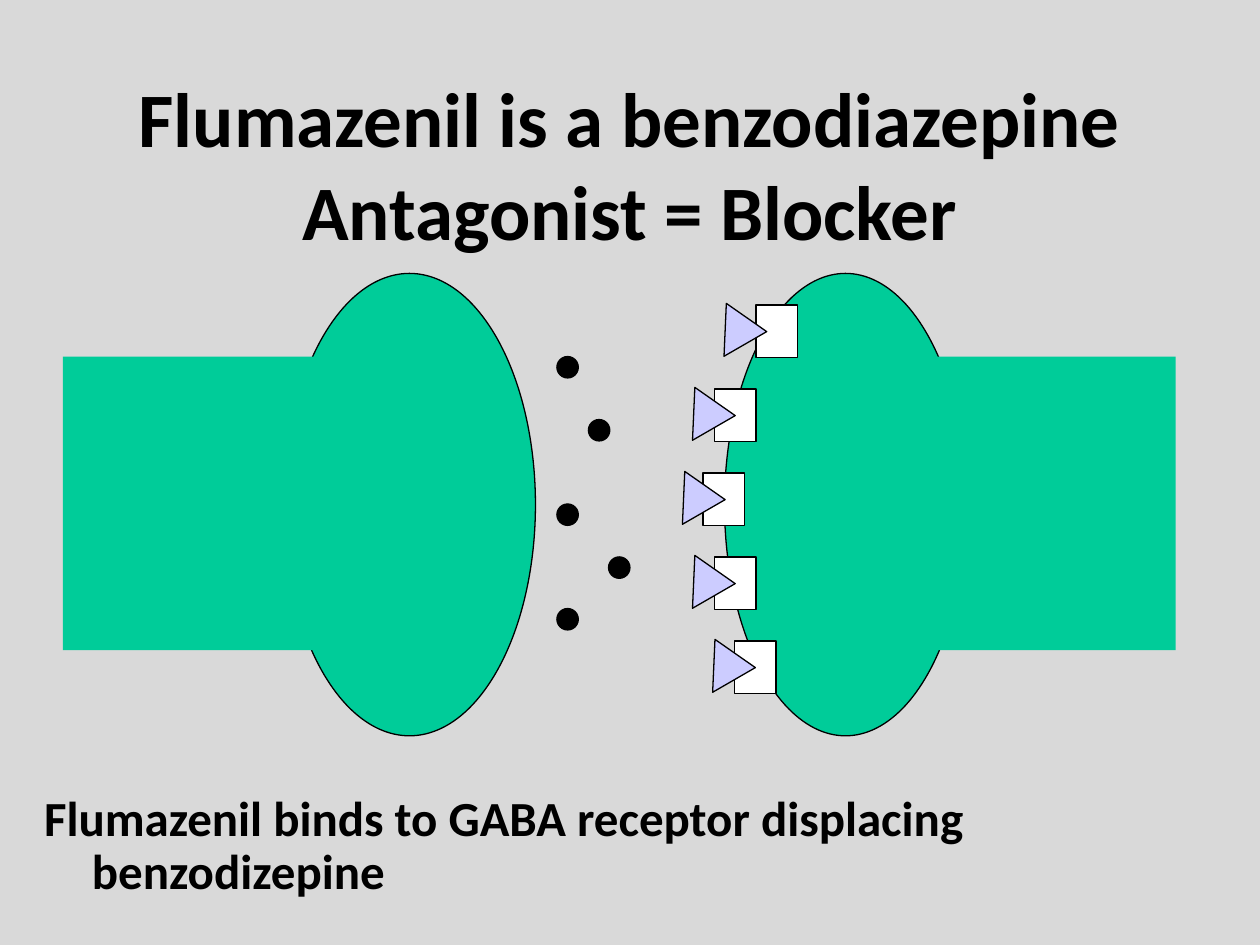
import pptx
import pptx.util
import pptx.dml.color
import pptx.enum.shapes
import pptx.enum.text
import pptx.oxml.ns
import lxml.etree

Inches = pptx.util.Inches
Pt = pptx.util.Pt
RGBColor = pptx.dml.color.RGBColor
KIND = pptx.enum.shapes.MSO_SHAPE
TEXT = pptx.enum.text

GREY = RGBColor(0xD9, 0xD9, 0xD9)
GREEN = RGBColor(0x00, 0xCC, 0x99)
LILAC = RGBColor(0xCC, 0xCC, 0xFF)
WHITE = RGBColor(0xFF, 0xFF, 0xFF)
BLACK = RGBColor(0x00, 0x00, 0x00)

deck = pptx.Presentation()
deck.slide_width = Inches(10)
deck.slide_height = Inches(7.5)
slide = deck.slides.add_slide(deck.slide_layouts[1])
slide.background.fill.solid()
slide.background.fill.fore_color.rgb = GREY


def write(holder, words, box, size, frame, form):
    holder.left, holder.top, holder.width, holder.height = map(Inches, box)
    text = holder.text_frame
    text.text = words
    para = text.paragraphs[0]
    font = para.runs[0].font
    font.color.rgb = BLACK
    face = {"name": "Calibri", "size": Pt(size), "bold": True}
    base = {"auto_size": TEXT.MSO_AUTO_SIZE.NONE, "word_wrap": True}
    for item, values in ((font, face), (text, base | frame), (para, form)):
        for name, value in values.items():
            setattr(item, name, value)
    return para


def draw(kind, box, fill, line=BLACK, turn=0):
    shape = slide.shapes.add_shape(kind, *map(Inches, box))
    shape.shadow.inherit = False
    shape.rotation = turn
    shape.fill.solid()
    shape.fill.fore_color.rgb = fill
    if line is None:
        shape.line.fill.background()
    else:
        shape.line.color.rgb = line
        shape.line.width = Pt(0.75)


write(slide.shapes.title, "Flumazenil is a benzodiazepine Antagonist = Blocker",
      (0.75, 0.67, 8.5, 1.25), 44,
      {"vertical_anchor": TEXT.MSO_ANCHOR.MIDDLE},
      {"alignment": TEXT.PP_ALIGN.CENTER})
note = write(slide.placeholders[1],
             "Flumazenil binds to GABA receptor displacing benzodizepine",
             (0.25, 6.25, 9.5, 0.67), 28,
             {"vertical_anchor": TEXT.MSO_ANCHOR.TOP},
             {"line_spacing": 0.9, "space_before": Pt(0)})
props = note._p.get_or_add_pPr()
for name, value in {"marL": 0.38, "indent": -0.38}.items():
    props.set(name, str(Inches(value)))
lxml.etree.SubElement(props, pptx.oxml.ns.qn("a:buNone"))

for bulb, stem in (((5.75, 2.17, 1.92, 3.67), (7.29, 2.83, 2.04, 2.33)),
                   ((2.25, 2.17, 2, 3.67), (0.5, 2.83, 2.13, 2.33))):
    draw(KIND.OVAL, bulb, GREEN)
    draw(KIND.RECTANGLE, stem, GREEN, None)

sites = ((6, 5.71), (5.67, 5.46), (5.58, 5.38), (5.67, 5.46), (5.83, 5.62))
for row, (site, drug) in enumerate(sites):
    top = 2.42 + row * 2 / 3
    draw(KIND.RECTANGLE, (site, top, 0.33, 0.42), WHITE)
    draw(KIND.ISOSCELES_TRIANGLE, (drug, top + 0.04, 0.42, 0.33), LILAC, turn=92.5)

for left, top in ((4.42, 2.83), (4.67, 3.33), (4.42, 4), (4.83, 4.42), (4.42, 4.83)):
    draw(KIND.OVAL, (left, top, 0.17, 0.17), BLACK)

deck.save("out.pptx")
